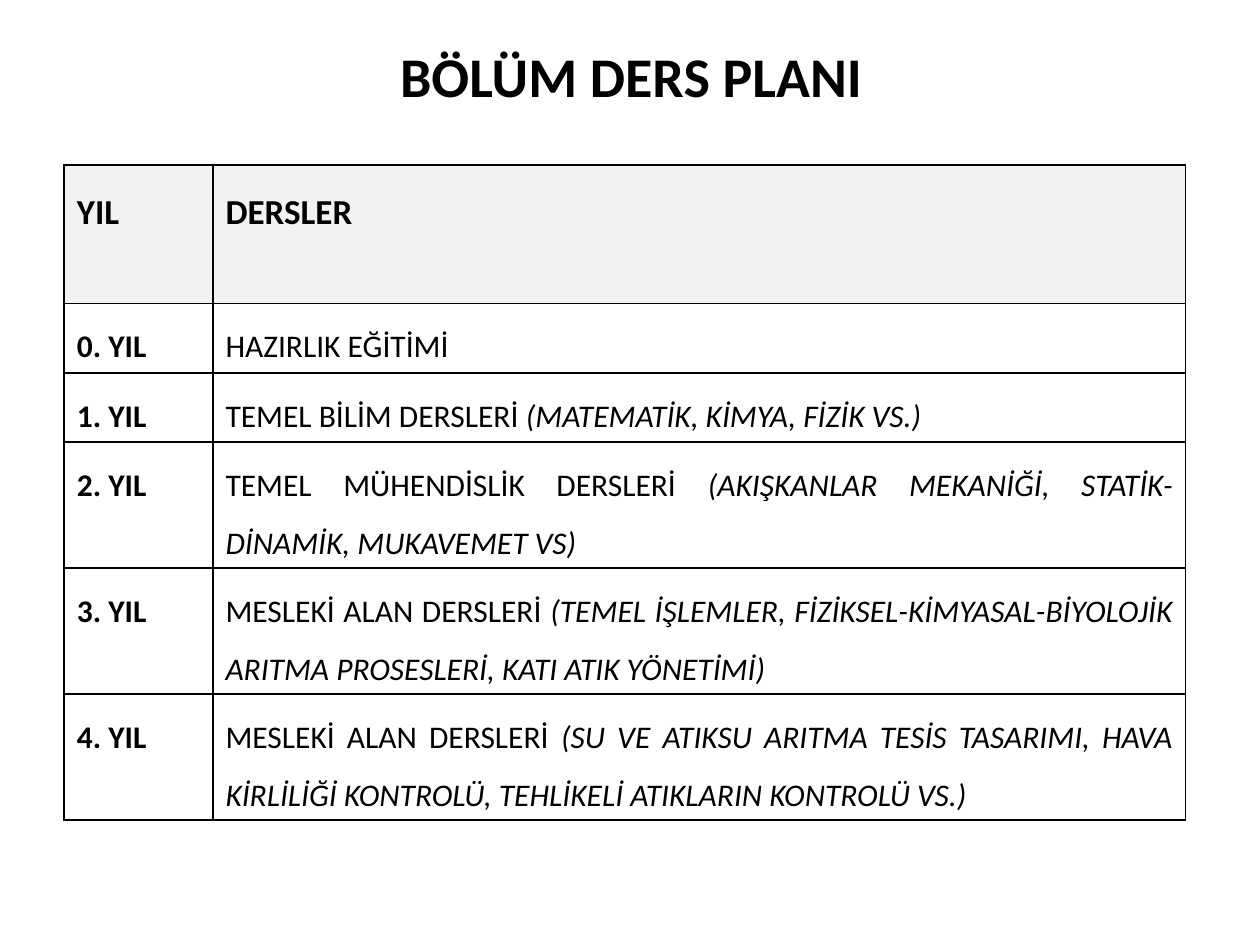
from typing import NamedTuple

from lxml import etree
from pptx import Presentation
from pptx.dml.color import RGBColor
from pptx.enum import text
from pptx.oxml import ns
from pptx.util import Inches, Pt

BLACK = RGBColor(0x00, 0x00, 0x00)
HEADER_GRAY = RGBColor(0xF2, 0xF2, 0xF2)
FONT = "Calibri"


class CourseRow(NamedTuple):
    year: str
    courses: str
    examples: str
    height: float


HEADER = CourseRow("YIL", "DERSLER", "", 1.1)
COURSE_ROWS = [
    CourseRow("0. YIL", "HAZIRLIK EĞİTİMİ", "", 0.55),
    CourseRow("1. YIL", "TEMEL BİLİM DERSLERİ ", "(MATEMATİK, KİMYA, FİZİK VS.)", 0.55),
    CourseRow("2. YIL", "TEMEL MÜHENDİSLİK DERSLERİ ",
              "(AKIŞKANLAR MEKANİĞİ, STATİK-DİNAMİK, MUKAVEMET VS)", 1.0),
    CourseRow("3. YIL", "MESLEKİ ALAN DERSLERİ ",
              "(TEMEL İŞLEMLER, FİZİKSEL-KİMYASAL-BİYOLOJİK ARITMA PROSESLERİ, "
              "KATI ATIK YÖNETİMİ)", 1.0),
    CourseRow("4. YIL", "MESLEKİ ALAN DERSLERİ ",
              "(SU VE ATIKSU ARITMA TESİS TASARIMI, HAVA KİRLİLİĞİ KONTROLÜ, "
              "TEHLİKELİ ATIKLARIN KONTROLÜ VS.)", 1.0),
]
COLUMN_WIDTHS = (1.18, 7.72)


def set_font(paragraph, size: int, bold: bool) -> None:
    font = paragraph.font
    font.name, font.size, font.bold = FONT, Pt(size), bold
    font.color.rgb = BLACK


def add_borders(cell) -> None:
    """Draw a 1 pt black line on every side; lines must precede the fill."""
    properties = cell._tc.get_or_add_tcPr()
    for index, side in enumerate(("lnL", "lnR", "lnT", "lnB")):
        line = etree.Element(ns.qn(f"a:{side}"), w=str(Pt(1)))
        fill = etree.SubElement(line, ns.qn("a:solidFill"))
        etree.SubElement(fill, ns.qn("a:srgbClr"), val=str(BLACK))
        properties.insert(index, line)


def fill_cell(cell, plain: str, italic: str, size: int, bold: bool, shaded: bool) -> None:
    cell.margin_top = cell.margin_bottom = Inches(0.04)
    if shaded:
        cell.fill.solid()
        cell.fill.fore_color.rgb = HEADER_GRAY
    else:
        cell.fill.background()
    add_borders(cell)
    paragraph = cell.text_frame.paragraphs[0]
    paragraph.alignment = text.PP_ALIGN.JUSTIFY
    paragraph.line_spacing = 1.5
    set_font(paragraph, size, bold)
    paragraph.add_run().text = plain
    if italic:
        run = paragraph.add_run()
        run.text = italic
        run.font.italic = True


def add_title(slide, title: str) -> None:
    box = slide.shapes.add_textbox(Inches(0.51), Inches(0.21), Inches(9), Inches(0.77))
    frame = box.text_frame
    frame.word_wrap = True
    frame.vertical_anchor = text.MSO_ANCHOR.MIDDLE
    paragraph = frame.paragraphs[0]
    paragraph.text = title
    paragraph.alignment = text.PP_ALIGN.CENTER
    set_font(paragraph, 32, True)


def add_course_table(slide, rows: list[CourseRow]) -> None:
    """Add the table; its first row is the shaded header."""
    table = slide.shapes.add_table(
        len(rows), len(COLUMN_WIDTHS), Inches(0.51), Inches(1.31),
        Inches(sum(COLUMN_WIDTHS)), Inches(sum(row.height for row in rows))).table
    table.horz_banding = False
    for column, width in zip(table.columns, COLUMN_WIDTHS):
        column.width = Inches(width)
    for index, row in enumerate(rows):
        is_header = index == 0
        size = 20 if is_header else 18
        table.rows[index].height = Inches(row.height)
        fill_cell(table.cell(index, 0), row.year, "", size, True, is_header)
        fill_cell(table.cell(index, 1), row.courses, row.examples, size, is_header, is_header)


def main() -> None:
    presentation = Presentation()
    presentation.slide_width = Inches(10)
    presentation.slide_height = Inches(7.5)
    slide = presentation.slides.add_slide(presentation.slide_layouts[6])
    add_title(slide, "BÖLÜM DERS PLANI")
    add_course_table(slide, [HEADER, *COURSE_ROWS])
    presentation.save("out.pptx")


if __name__ == "__main__":
    main()
